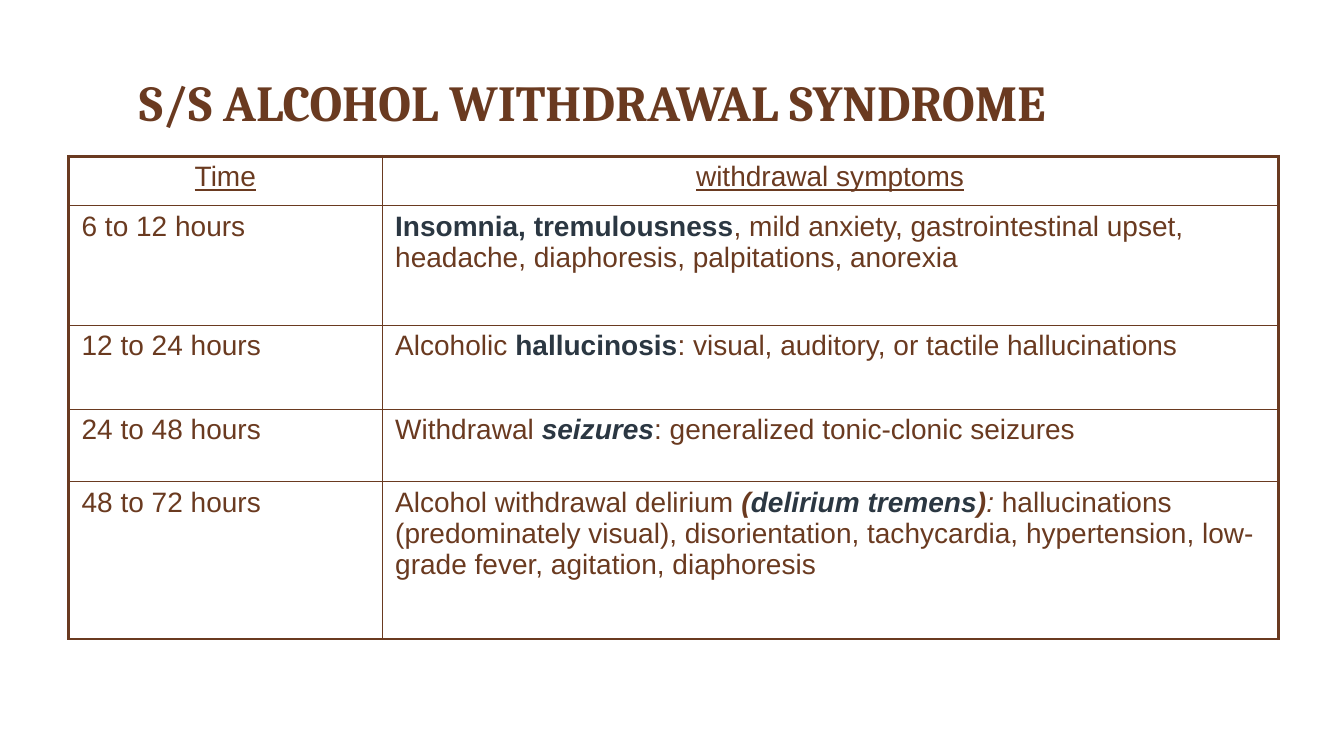
from dataclasses import dataclass

from lxml.etree import SubElement
from pptx import Presentation
from pptx.dml.color import RGBColor
from pptx.enum.text import MSO_ANCHOR, PP_ALIGN
from pptx.oxml.ns import qn
from pptx.util import Inches, Pt


@dataclass(frozen=True)
class Theme:
    brown: str = "6A3A20"
    slate: str = "2B3742"
    white: str = "FFFFFF"
    heading_font: str = "Cambria"
    body_font: str = "Arial"
    title_size: int = 36
    body_size: int = 20
    outer_line: float = 2.25
    inner_line: float = 1


PLAIN, KEY, KEY_ITALIC, BRACKET, ITALIC = range(5)
HEADERS = ["Time", "withdrawal symptoms"]
STAGES = [
    ("6 to 12 hours", [
        ("Insomnia, tremulousness", KEY),
        (", mild anxiety, gastrointestinal upset, headache, diaphoresis, "
         "palpitations, anorexia", PLAIN)]),
    ("12 to 24 hours", [
        ("Alcoholic ", PLAIN), ("hallucinosis", KEY),
        (": visual, auditory, or tactile hallucinations", PLAIN)]),
    ("24 to 48 hours", [
        ("Withdrawal ", PLAIN), ("seizures", KEY_ITALIC),
        (": generalized tonic-clonic seizures", PLAIN)]),
    ("48 to 72 hours", [
        ("Alcohol withdrawal delirium ", PLAIN), ("(", BRACKET),
        ("delirium tremens", KEY_ITALIC), (")", BRACKET), (": ", ITALIC),
        ("hallucinations (predominately visual), disorientation, tachycardia, "
         "hypertension, low-grade fever, agitation, diaphoresis", PLAIN)]),
]


class SlideBuilder:
    """Places elements on one slide; lengths are percentages of its size."""

    def __init__(self, prs, theme):
        self.prs, self.theme = prs, theme
        self.slide = prs.slides.add_slide(prs.slide_layouts[5])
        fill = self.slide.background.fill
        fill.solid()
        fill.fore_color.rgb = RGBColor.from_string(theme.white)

    def x(self, share):
        return round(self.prs.slide_width * share / 100)

    def y(self, share):
        return round(self.prs.slide_height * share / 100)

    def style(self, font, name, size, color, bold=False, italic=False):
        font.name, font.size = name, Pt(size)
        font.color.rgb = RGBColor.from_string(color)
        font.bold, font.italic = bold, italic

    def title(self, text, left, top, width, height):
        sp = self.slide.shapes.title
        sp.left, sp.top = self.x(left), self.y(top)
        sp.width, sp.height = self.x(width), self.y(height)
        tf = sp.text_frame
        tf.text = text
        tf.vertical_anchor = MSO_ANCHOR.BOTTOM
        p = tf.paragraphs[0]
        p.alignment = PP_ALIGN.LEFT
        self.style(p.font, self.theme.heading_font, self.theme.title_size,
                   self.theme.brown, bold=True)

    def table(self, headers, stages, left, top, col_shares, row_shares):
        frame = self.slide.shapes.add_table(
            len(row_shares), len(col_shares), self.x(left), self.y(top),
            self.x(sum(col_shares)), self.y(sum(row_shares)))
        table = frame.table
        table.first_row = table.horz_banding = False
        for col, share in zip(table.columns, col_shares):
            col.width = self.x(share)
        for row, share in zip(table.rows, row_shares):
            row.height = self.y(share)
        rows = [[[(h, PLAIN)] for h in headers]]
        rows += [[[(time, PLAIN)], symptoms] for time, symptoms in stages]
        last_row, last_col = len(rows) - 1, len(headers) - 1
        for i, row in enumerate(rows):
            for j, runs in enumerate(row):
                cell = table.cell(i, j)
                self.cell_text(cell, runs, header=i == 0)
                self.borders(cell, {"L": j == 0, "R": j == last_col,
                                    "T": i == 0, "B": i == last_row})
                cell.fill.background()

    def cell_text(self, cell, runs, header):
        cell.margin_left = cell.margin_right = Inches(0.13)
        cell.margin_top = cell.margin_bottom = Inches(0.05)
        p = cell.text_frame.paragraphs[0]
        p.alignment = PP_ALIGN.CENTER if header else PP_ALIGN.LEFT
        t = self.theme
        for text, kind in runs:
            r = p.add_run()
            r.text = text
            font = p.font if len(runs) == 1 else r.font
            self.style(font, t.body_font, t.body_size,
                       t.slate if kind in (KEY, KEY_ITALIC) else t.brown,
                       bold=kind in (KEY, KEY_ITALIC, BRACKET),
                       italic=kind in (KEY_ITALIC, BRACKET, ITALIC))
            font.underline = header

    def borders(self, cell, outer_sides):
        """Draw each side of a cell, thicker on the table's outer edge."""
        tc_pr = cell._tc.get_or_add_tcPr()
        for side, outer in outer_sides.items():
            width = self.theme.outer_line if outer else self.theme.inner_line
            line = SubElement(tc_pr, qn(f"a:ln{side}"), w=str(Pt(width)))
            fill = SubElement(line, qn("a:solidFill"))
            SubElement(fill, qn("a:srgbClr"), val=self.theme.brown)


def main():
    prs = Presentation()
    prs.slide_width, prs.slide_height = Inches(13.33), Inches(7.5)
    s = SlideBuilder(prs, Theme())
    s.title("S/S ALCOHOL WITHDRAWAL SYNDROME", 9.6, 4.8, 90, 13.33)
    s.table(HEADERS, STAGES, 5.1, 20.67, col_shares=[23.33, 66.67],
            row_shares=[6.53, 15.87, 11.07, 9.6, 20.8])
    prs.save("out.pptx")


if __name__ == "__main__":
    main()
